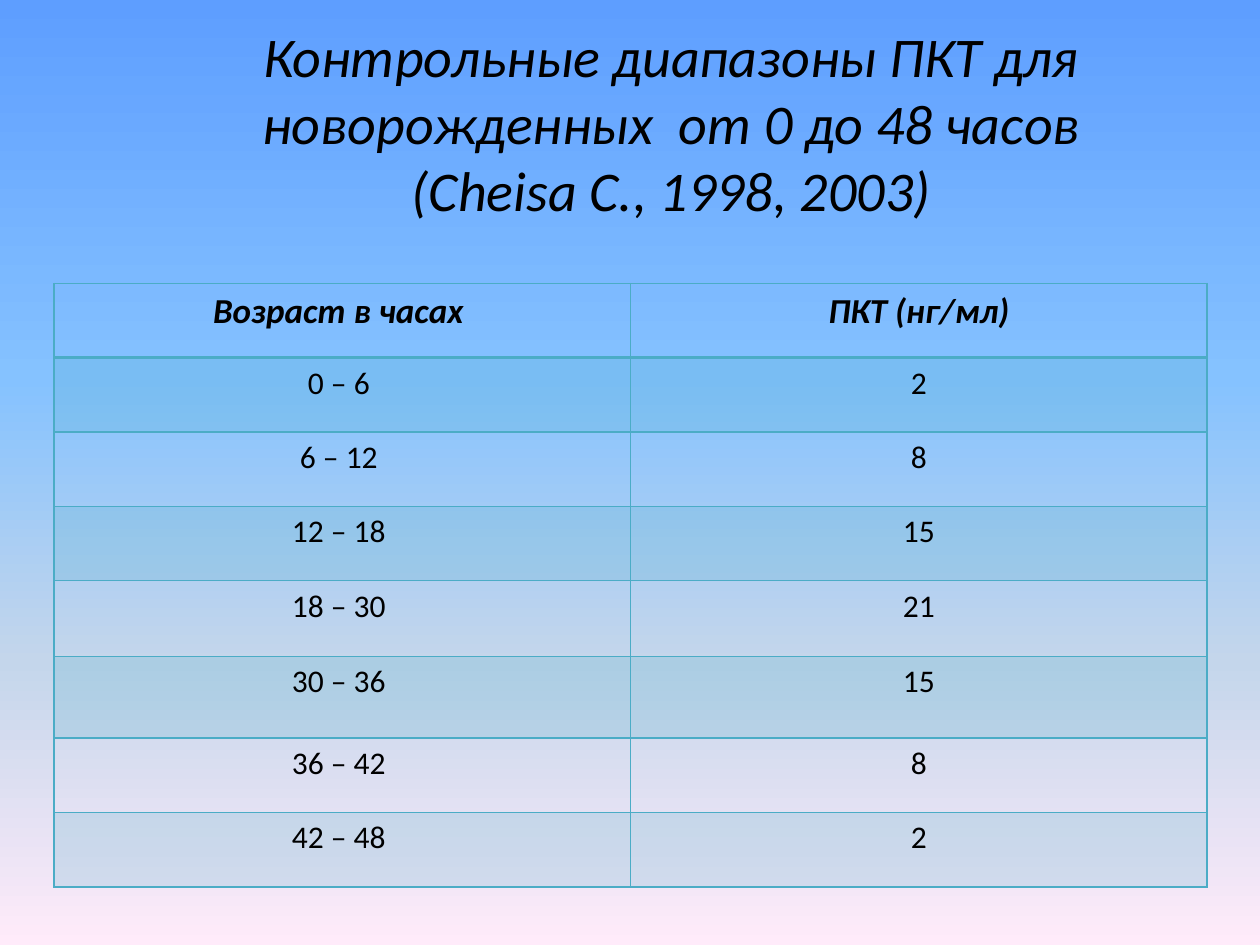
from lxml import etree
from pptx import Presentation
from pptx.dml.color import RGBColor
from pptx.enum.text import MSO_ANCHOR, PP_ALIGN
from pptx.oxml.ns import qn
from pptx.util import Inches, Pt

CENTER = PP_ALIGN.CENTER
MIDDLE = MSO_ANCHOR.MIDDLE
SLIDE_WIDTH, SLIDE_HEIGHT = Inches(10), Inches(7.5)
FONT = "Calibri"
COLORS = {"text": "000000", "teal": "4BACC6"}
SKY = [(0, "5E9EFF"), (40, "85C2FF"), (70, "C4D6EB"), (100, "FFEBFA")]
BAND_OPACITY = 20

TITLE = ["Контрольные диапазоны ПКТ для новорожденных  от 0 до 48 часов",
         "(Cheisa C., 1998, 2003)"]
HEADER = ("Возраст в часах ", "ПКТ (нг/мл)")
RANGES = [("0 – 6 ", "2"), ("6 – 12 ", "8"), ("12 – 18 ", "15"),
          ("18 – 30 ", "21"), ("30 – 36 ", "15"), ("36 – 42 ", "8"),
          ("42 – 48 ", "2")]
ROW_HEIGHT = 0.59
TALLER_ROWS = {4: 0.6, 5: 0.65}


def write_text(text_frame, lines, size, bold=False, italic=False):
    """Write centred lines into one paragraph, with line breaks between."""
    paragraph = text_frame.paragraphs[0]
    paragraph.alignment = CENTER
    for index, line in enumerate(lines):
        if index:
            paragraph.add_line_break()
        run = paragraph.add_run()
        run.text = line
        font = run.font
        font.name, font.size = FONT, Pt(size)
        font.bold, font.italic = bold, italic
        font.color.rgb = RGBColor.from_string(COLORS["text"])


def paint_background(slide, stops):
    """Fill the background with a gradient running from top to bottom."""
    fill = slide.background.fill
    fill.gradient()
    fill.gradient_angle = 270
    stop_list = slide.element.find(".//" + qn("a:gsLst"))
    for old_stop in list(stop_list):
        stop_list.remove(old_stop)
    for position, color in stops:
        stop = etree.SubElement(stop_list, qn("a:gs"), pos=str(position * 1000))
        etree.SubElement(stop, qn("a:srgbClr"), val=color)


def add_title(slide, left, top, width, height):
    text_frame = slide.shapes.add_textbox(left, top, width, height).text_frame
    text_frame.word_wrap = True
    text_frame.vertical_anchor = MIDDLE
    write_text(text_frame, TITLE, size=32, italic=True)


def set_borders(cell, top=1, bottom=1):
    properties = cell._tc.get_or_add_tcPr()
    for side, points in (("L", 1), ("R", 1), ("T", top), ("B", bottom)):
        line = etree.SubElement(properties, qn("a:ln" + side), w=str(Pt(points)))
        solid = etree.SubElement(line, qn("a:solidFill"))
        etree.SubElement(solid, qn("a:srgbClr"), val=COLORS["teal"])


def fill_cell(cell, banded):
    if not banded:
        cell.fill.background()
        return
    cell.fill.solid()
    cell.fill.fore_color.rgb = RGBColor.from_string(COLORS["teal"])
    color = cell._tc.tcPr.find(qn("a:solidFill")).find(qn("a:srgbClr"))
    etree.SubElement(color, qn("a:alpha"), val=str(BAND_OPACITY * 1000))


def add_range_table(slide, left, top, width, height):
    rows = [HEADER] + RANGES
    table = slide.shapes.add_table(
        len(rows), len(HEADER), left, top, width, height).table
    table.first_row = table.horz_banding = False
    for row_index, values in enumerate(rows):
        is_header = row_index == 0
        table.rows[row_index].height = Inches(
            TALLER_ROWS.get(row_index, ROW_HEIGHT))
        for column_index, value in enumerate(values):
            cell = table.cell(row_index, column_index)
            write_text(cell.text_frame, [value], size=20 if is_header else 18,
                       bold=is_header, italic=is_header)
            # The rule under the header is twice as thick
            set_borders(cell, top=2 if row_index == 1 else 1,
                        bottom=2 if is_header else 1)
            fill_cell(cell, banded=row_index % 2 == 1)


def main():
    presentation = Presentation()
    presentation.slide_width = SLIDE_WIDTH
    presentation.slide_height = SLIDE_HEIGHT
    slide = presentation.slides.add_slide(presentation.slide_layouts[6])
    paint_background(slide, SKY)
    # Title across the top, table below
    add_title(slide, Inches(0.83), 0, Inches(9), Inches(1.94))
    add_range_table(slide, Inches(0.43), Inches(2.25), Inches(9.15), Inches(4.8))
    presentation.save("out.pptx")


if __name__ == "__main__":
    main()
